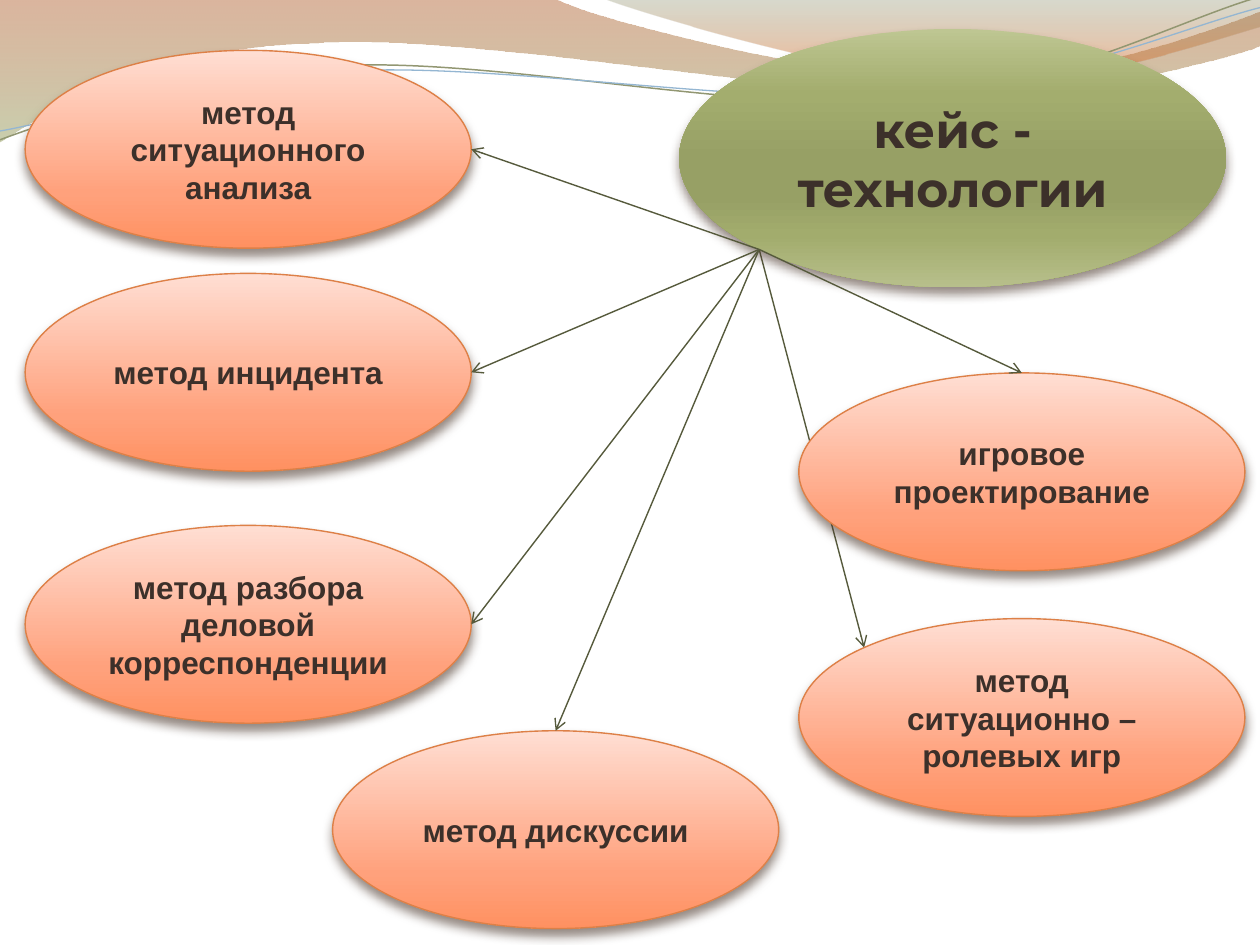
"""Build a slide of case-technology methods arranged around a central oval."""
import math
from dataclasses import dataclass

import lxml.etree
import pptx
import pptx.dml.color
import pptx.enum.shapes
import pptx.enum.text
import pptx.oxml.ns
import pptx.util

COLUMNS, ROWS = 100, 75
CELL = pptx.util.Inches(0.1)
TOP, TOP_LEFT, BOTTOM_LEFT, RIGHT = 0, 1, 3, 6
TEXT_COLOR, SHADOW_COLOR, ARROW_COLOR = "3C302A", "4E3B30", "565A3C"
HUB_STOPS = ((0, "BEC692", 100), (25, "A3AD6E", 100), (50, "97A065", 100),
             (65, "97A065", 100), (80, "A2AC6D", 100), (100, "B7BF8B", 100))
METHOD_STOPS = ((0, "FFDED3", 100), (72, "FFA17C", 100), (100, "FF9161", 100))


@dataclass(frozen=True)
class Oval:
    text: str
    left: float
    top: float
    site: int = RIGHT
    width: float = 35.4
    height: float = 15.7
    size: int = 18
    font: str = "Arial"
    stops: tuple = METHOD_STOPS
    outline: str = "DD8047"

    def site_point(self, site: int) -> tuple[float, float]:
        angle = math.radians(90 + 45 * site)
        return (self.left + self.width / 2 * (1 + math.cos(angle)),
                self.top + self.height / 2 * (1 - math.sin(angle)))


@dataclass(frozen=True)
class Wave:
    box: tuple
    start: tuple
    segments: tuple
    stops: tuple = ()
    outline: str = ""
    weight: float = 0
    rotation: float = 0

    def local_points(self, segment: tuple) -> list[tuple[int, int]]:
        left, top, width, height = self.box
        angle = math.radians(-self.rotation)
        cosine, sine = math.cos(angle), math.sin(angle)
        offsets = [(x - left - width / 2, y - top - height / 2)
                   for x, y in zip(segment[::2], segment[1::2])]
        return [(grid(x * cosine - y * sine + width / 2),
                 grid(x * sine + y * cosine + height / 2)) for x, y in offsets]


WAVES = (
    Wave((-0.1, -0.1, 100.2, 11.4), (0, 0),
         ((44, -0.1), (47.6, 1.7, 66.4, 6.3, 75.8, 6.3),
          (85.3, 6.3, 95.8, 2.6, 100, 0.9), (100.1, 3.6),
          (98.3, 4.4, 87, 7.6, 74.6, 7.5), (62.2, 7.5, 38.2, 2.8, 25.7, 3.4),
          (12.9, 3.6, 4.6, 8.3, -0.1, 11.3), (0, 0)),
         stops=((0, "AF5C29", 45), (100, "9DA66B", 55))),
    Wave((47.9, -0.1, 52.1, 7), (47.9, -0.1),
         ((50.9, 1.1, 68.2, 6.2, 76.9, 6.5), (85.6, 6.9, 96.1, 3.2, 100, 2.1),
          (100, 0), (47.9, -0.1)),
         stops=((0, "7D835B", 30), (80, "DD6B24", 45))),
    Wave((-0.2, 2.2, 100.2, 7.1), (0, 11.1),
         ((4.8, 9.3, 15.8, 5.7, 27.7, 5.2), (39.5, 4.7, 59.3, 8.9, 71.3, 8),
          (83.3, 7.1, 93.8, 1.5, 99.8, -0.2)),
         outline="929772", weight=0.85, rotation=357.3),
    Wave((-0.2, 3, 100.3, 5.8), (0, 10.4),
         ((4.7, 9.6, 16.4, 6.1, 28.3, 5.6), (40.3, 5.1, 59.7, 8.4, 71.7, 7.5),
          (83.6, 6.7, 94.1, 2.1, 100, 0.6)),
         outline="94B6D2", weight=0.75, rotation=357.3),
)
HUB = Oval("кейс - технологии", 53.9, 2.3, BOTTOM_LEFT, 43.4, 20.5, 28, "Montserrat",
           HUB_STOPS, "")
ROLE_GAMES = Oval("метод ситуационно – ролевых игр", 63.4, 49.1, TOP_LEFT)
METHODS = (
    Oval("метод ситуационного анализа", 2, 4),
    Oval("метод инцидента", 2, 21.7),
    Oval("метод разбора деловой корреспонденции", 2, 41.7),
    Oval("игровое проектирование", 63.4, 29.6, TOP),
    Oval("метод дискуссии", 26.4, 58, TOP),
    ROLE_GAMES,
)


def color(value: str) -> pptx.dml.color.RGBColor:
    return pptx.dml.color.RGBColor.from_string(value)


def grid(cells: float) -> int:
    return round(cells * CELL)


def add_node(parent, name: str, **attributes):
    node = lxml.etree.SubElement(parent, pptx.oxml.ns.qn(name))
    for key, value in attributes.items():
        node.set(key, str(value))
    return node


def apply_format(target, values: dict) -> None:
    for name, value in values.items():
        setattr(target, name, value)


def set_gradient(shape, stops: tuple) -> None:
    shape.fill.gradient()
    shape.fill.gradient_angle = 270
    stop_list = next(shape.element.spPr.iter(pptx.oxml.ns.qn("a:gsLst")))
    for old_stop in list(stop_list):
        stop_list.remove(old_stop)
    for position, value, opacity in stops:
        stop = add_node(stop_list, "a:gs", pos=position * 1000)
        solid = add_node(stop, "a:srgbClr", val=value)
        if opacity < 100:
            add_node(solid, "a:alpha", val=opacity * 1000)


def set_line(line, value: str, weight: float) -> None:
    if value:
        line.color.rgb = color(value)
        line.width = pptx.util.Pt(weight)
    else:
        line.fill.background()


def set_curves(shape, wave: Wave) -> None:
    outline = next(shape.element.spPr.iter(pptx.oxml.ns.qn("a:path")))
    for old_step in list(outline):
        outline.remove(old_step)
    for key, length in zip("wh", wave.box[2:]):
        outline.set(key, str(grid(length)))
    steps = [("a:moveTo", wave.start)]
    steps += [("a:lnTo" if len(segment) == 2 else "a:cubicBezTo", segment)
              for segment in wave.segments]
    for name, segment in steps:
        step = add_node(outline, name)
        for x, y in wave.local_points(segment):
            add_node(step, "a:pt", x=x, y=y)
    if wave.stops:
        add_node(outline, "a:close")


def draw_wave(slide, wave: Wave) -> None:
    builder = slide.shapes.build_freeform(*map(grid, wave.start))
    builder.add_line_segments([tuple(map(grid, segment[-2:])) for segment in wave.segments],
                              close=False)
    shape = builder.convert_to_shape()
    apply_format(shape, dict(zip(("left", "top", "width", "height"), map(grid, wave.box))))
    shape.rotation = wave.rotation
    set_curves(shape, wave)
    shape.shadow.inherit = False
    if wave.stops:
        set_gradient(shape, wave.stops)
    else:
        shape.fill.background()
    set_line(shape.line, wave.outline, wave.weight)


def draw_oval(slide, oval: Oval):
    box = map(grid, (oval.left, oval.top, oval.width, oval.height))
    shape = slide.shapes.add_shape(pptx.enum.shapes.MSO_SHAPE.OVAL, *box)
    set_gradient(shape, oval.stops)
    set_line(shape.line, oval.outline, 0.79)
    shape.shadow.inherit = False
    effects = shape.element.spPr.find(pptx.oxml.ns.qn("a:effectLst"))
    shadow = add_node(effects, "a:outerShdw", blurRad=pptx.util.Pt(6),
                      dist=pptx.util.Pt(4), dir=5400000, rotWithShape=0)
    add_node(add_node(shadow, "a:srgbClr", val=SHADOW_COLOR), "a:alpha", val=60000)
    frame = shape.text_frame
    apply_format(frame, {"word_wrap": True,
                         "vertical_anchor": pptx.enum.text.MSO_ANCHOR.MIDDLE})
    paragraph = frame.paragraphs[0]
    paragraph.alignment = pptx.enum.text.PP_ALIGN.CENTER
    run = paragraph.add_run()
    run.text = oval.text
    apply_format(run.font, {"name": oval.font, "size": pptx.util.Pt(oval.size), "bold": True})
    run.font.color.rgb = color(TEXT_COLOR)
    return shape


def draw_arrow(slide, hub_shape, method_shape, method: Oval):
    ends = (*HUB.site_point(HUB.site), *method.site_point(method.site))
    connector = slide.shapes.add_connector(
        pptx.enum.shapes.MSO_CONNECTOR.STRAIGHT, *map(grid, ends))
    set_line(connector.line, ARROW_COLOR, 0.79)
    properties = connector.element.spPr
    add_node(properties.find(pptx.oxml.ns.qn("a:ln")), "a:tailEnd", type="arrow")
    add_node(properties, "a:effectLst")
    joints = next(connector.element.iter(pptx.oxml.ns.qn("p:cNvCxnSpPr")))
    add_node(joints, "a:stCxn", id=hub_shape.shape_id, idx=HUB.site)
    add_node(joints, "a:endCxn", id=method_shape.shape_id, idx=method.site)
    return connector


def main() -> None:
    presentation = pptx.Presentation()
    apply_format(presentation, {"slide_width": grid(COLUMNS), "slide_height": grid(ROWS)})
    slide = presentation.slides.add_slide(presentation.slide_layouts.get_by_name("Blank"))
    for wave in WAVES:
        draw_wave(slide, wave)
    hub_shape = draw_oval(slide, HUB)
    method_shapes = [draw_oval(slide, method) for method in METHODS]
    for method, method_shape in zip(METHODS, method_shapes):
        connector = draw_arrow(slide, hub_shape, method_shape, method)
        if method is ROLE_GAMES:
            hub_shape.element.addprevious(connector.element)
    presentation.save("out.pptx")


if __name__ == "__main__":
    main()
